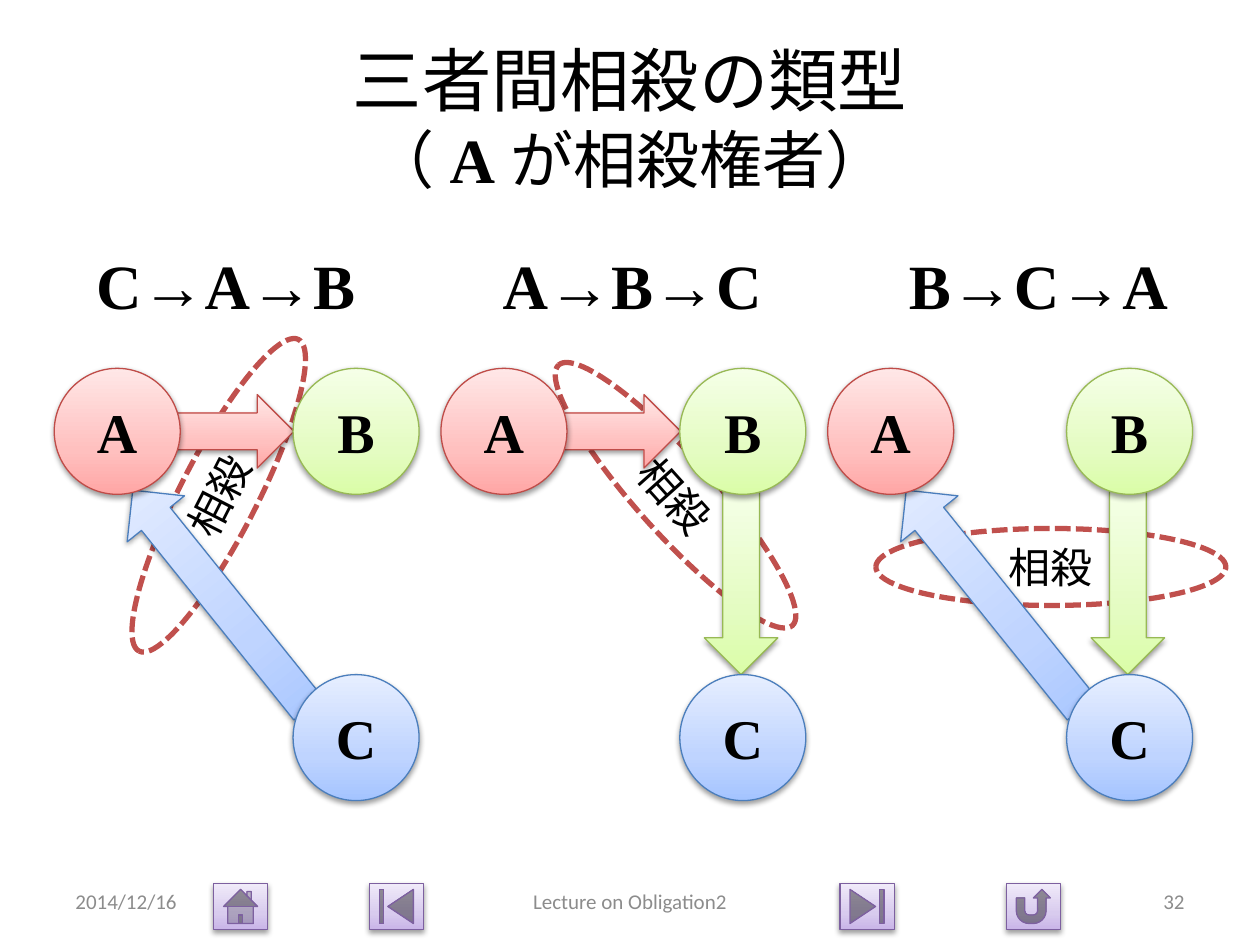
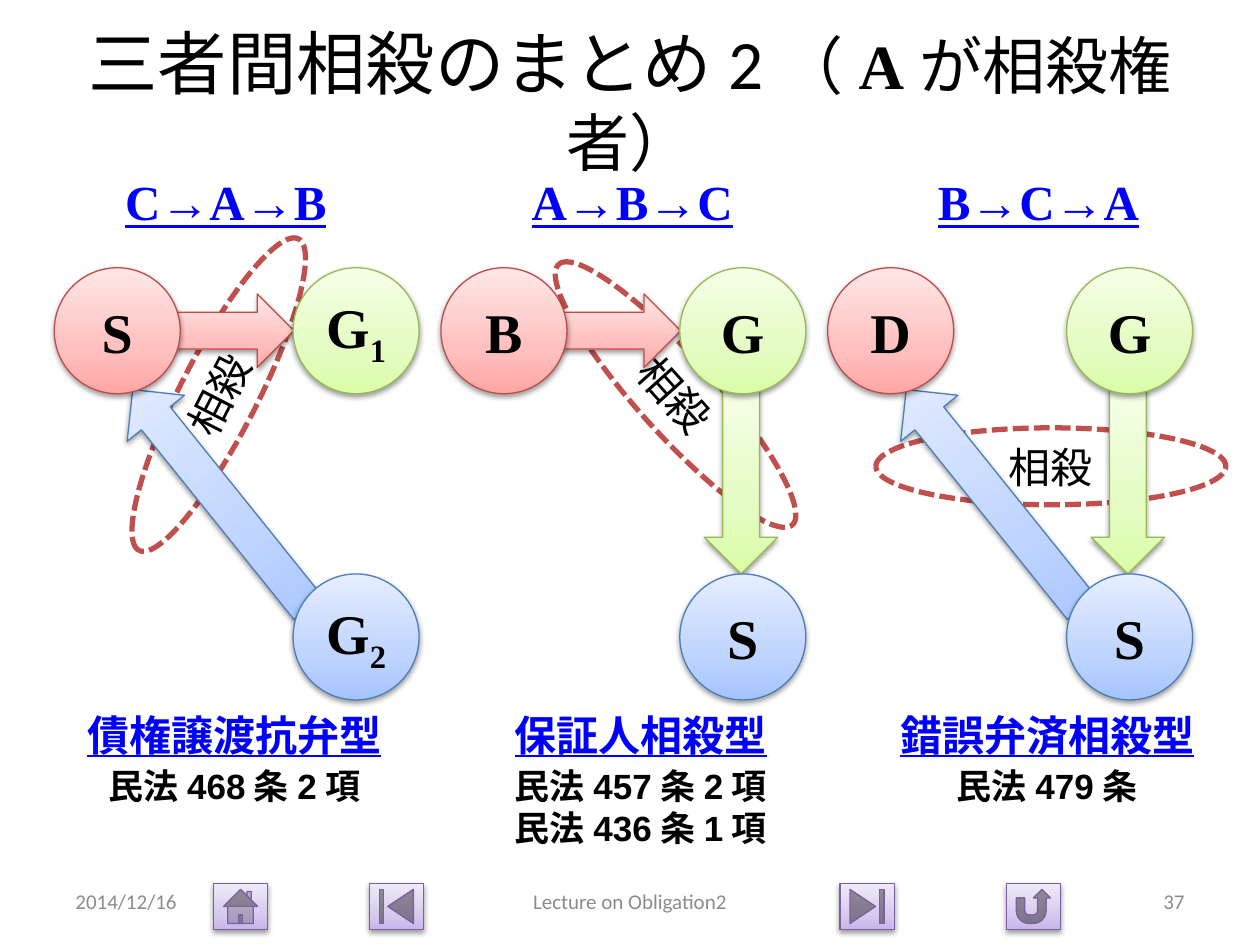
from copy import deepcopy
from dataclasses import dataclass
from typing import NamedTuple

from pptx import Presentation
from pptx.dml.color import RGBColor
from pptx.enum.dml import MSO_LINE
from pptx.enum.lang import MSO_LANGUAGE_ID as Lang
from pptx.enum.shapes import MSO_SHAPE as Shape
from pptx.enum.text import MSO_ANCHOR as Anchor, PP_ALIGN as Align
from pptx.oxml.ns import qn
from pptx.util import Pt
from lxml.etree import SubElement


class Box(NamedTuple):
    x: float
    y: float
    w: float
    h: float
    rot: float = 0

    def shifted(self, dx: float, dy: float = 0) -> "Box":
        return self._replace(x=self.x + dx, y=self.y + dy)


class Style(NamedTuple):
    font: str
    size: float
    color: str = "000000"
    bold: bool = False
    underline: bool = False


class Theme(NamedTuple):
    dark: str
    mid: str
    light: str
    line: str


class Part(NamedTuple):
    kind: Shape
    box: Box
    theme: Theme


@dataclass
class Case:
    flow: str
    names: tuple[str, str, str]
    model: str = ""
    articles: str = ""


@dataclass
class Page:
    number: str
    title: str
    title_height: float
    top: float
    flow_box: Box
    flow_style: Style
    flow_anchor: Anchor
    cases: list[Case]


RED = Theme("FFA6A5", "FFC0BF", "FFE7E7", "BF4C48")
GREEN = Theme("DAFDA7", "E4FCC2", "F5FFE7", "98B955")
BLUE = Theme("A4C4FF", "BFD4FF", "E6EEFF", "4B7EBC")
PURPLE = Theme("C9B5E8", "D8CBEE", "F0EAF9", "7D60A0")
OFFSET_RED, LINK = "C0504D", "0000FF"

SERIF, SANS, CJK = "Times New Roman", "Calibri", "Noto Sans CJK JP"
TITLE = Style(SANS, 39.6)
SUBTITLE = Style(SANS, 36)
HOLDER = Style(SERIF, 36, bold=True)
NAME = Style(SERIF, 32, bold=True)
OFFSET = Style(CJK, 24)
FOOTER = Style(SANS, 12, "8C8C8C")
MODEL = Style("Arial", 24, LINK, True, True)
ARTICLES = Style("Arial", 20, bold=True)

COLUMN_LEFT, COLUMN_PITCH, LABEL_PITCH = 31, 221, 232.2

A_TO_B = Part(Shape.RIGHT_ARROW, Box(60, 15, 77, 42), RED)
C_TO_A = Part(Shape.UP_ARROW, Box(74, 52, 42, 160, 321.2), BLUE)
B_TO_C = Part(Shape.DOWN_ARROW, Box(150.5, 70, 42, 105), GREEN)
CASE_ARROWS = [(A_TO_B, C_TO_A), (B_TO_C, A_TO_B), (C_TO_A, B_TO_C)]
OFFSET_RINGS = [Box(-6, 50.5, 200, 44, 297.1), Box(34, 50.5, 200, 44, 48.1),
                Box(27.5, 91.5, 200, 44)]
CIRCLES = [Part(Shape.OVAL, Box(x, y, 72, 72), theme)
           for x, y, theme in [(0, 0, RED), (136.5, 0, GREEN), (136.5, 175, BLUE)]]
BUTTONS = [Part(kind, Box(x, 505, 31, 26), PURPLE) for kind, x in [
    (Shape.ACTION_BUTTON_HOME, 122), (Shape.ACTION_BUTTON_BEGINNING, 211),
    (Shape.ACTION_BUTTON_END, 480), (Shape.ACTION_BUTTON_RETURN, 575)]]

PAGES = [
    Page("32", "三者間相殺の類型\v", 90, 210.5, Box(46, 137.5, 166, 51),
         Style(SERIF, 36, bold=True), Anchor.TOP, [
             Case("C→A→B", ("A", "B", "C")),
             Case("A→B→C", ("A", "B", "C")),
             Case("B→C→A", ("A", "B", "C"))]),
    Page("37", "三者間相殺のまとめ2", 70.5, 153, Box(38, 94.5, 182, 41),
         Style(SERIF, 28, LINK, True, True), Anchor.MIDDLE, [
             Case("C→A→B", ("S", "G1", "G2"), "債権譲渡抗弁型", "民法468条2項"),
             Case("A→B→C", ("B", "G", "S"), "保証人相殺型",
                  "民法457条2項\n民法436条1項"),
             Case("B→C→A", ("D", "G", "S"), "錯誤弁済相殺型", "民法479条")]),
]


def rgb(color: str) -> RGBColor:
    return RGBColor.from_string(color)


def format_run(r, style: Style) -> None:
    font = r.font
    font.name, font.size = style.font, Pt(style.size)
    font.bold, font.underline = style.bold, style.underline
    font.color.rgb = rgb(style.color)
    font.language_id = Lang.JAPANESE
    latin = r._r.rPr.find(qn("a:latin"))
    ea = deepcopy(latin)
    ea.tag = qn("a:ea")
    latin.addnext(ea)


def write(tf, text: str, style: Style, align: Align = Align.CENTER,
          anchor: Anchor = Anchor.MIDDLE) -> None:
    tf.text = text
    tf.word_wrap = True
    tf.vertical_anchor = anchor
    for p in tf.paragraphs:
        p.alignment = align
        for r in p.runs:
            format_run(r, style)


def append(p, text: str, style: Style):
    r = p.add_run()
    r.text = text
    format_run(r, style)
    return r


def add_text(s, box: Box, text: str, style: Style, align: Align = Align.CENTER,
             anchor: Anchor = Anchor.MIDDLE):
    tf = s.shapes.add_textbox(*map(Pt, box[:4])).text_frame
    write(tf, text, style, align, anchor)
    return tf


def add_preset(s, kind: Shape, box: Box):
    sp = s.shapes.add_shape(kind, *map(Pt, box[:4]))
    sp.rotation = box.rot
    sp.shadow.inherit = False
    return sp


def add_shadow(sp) -> None:
    effects = sp._element.spPr.find(qn("a:effectLst"))
    shadow = SubElement(effects, qn("a:outerShdw"), blurRad="40000", dist="20000",
                        dir="5400000", rotWithShape="0")
    color = SubElement(shadow, qn("a:srgbClr"), val="000000")
    SubElement(color, qn("a:alpha"), val="38000")


def add_part(s, part: Part, dx: float = 0, dy: float = 0):
    sp = add_preset(s, part.kind, part.box.shifted(dx, dy))
    theme = part.theme
    sp.fill.gradient()
    sp.fill.gradient_angle = 90
    stops = sp._element.spPr.find(".//" + qn("a:gsLst"))
    stops.insert(1, deepcopy(stops[0]))
    for stop, position, color in zip(sp.fill.gradient_stops, (0, 0.35, 1), theme[:3]):
        stop.position = position
        stop.color.rgb = rgb(color)
    sp.line.color.rgb = rgb(theme.line)
    sp.line.width = Pt(0.75)
    add_shadow(sp)
    return sp


def add_offset_ring(s, box: Box) -> None:
    sp = add_preset(s, Shape.OVAL, box)
    sp.fill.background()
    sp.line.color.rgb = rgb(OFFSET_RED)
    sp.line.width = Pt(3)
    sp.line.dash_style = MSO_LINE.SQUARE_DOT
    write(sp.text_frame, "相殺", OFFSET)


def add_circle(s, part: Part, name: str, dx: float, dy: float) -> None:
    tf = add_part(s, part, dx, dy).text_frame
    tf.margin_left = tf.margin_right = 0
    write(tf, name[0], NAME)
    if name[1:]:
        r = append(tf.paragraphs[0], name[1:], NAME)
        r._r.rPr.set("baseline", "-25000")


def add_case(s, page: Page, column: int) -> None:
    case = page.cases[column]
    left = COLUMN_LEFT + column * COLUMN_PITCH
    label_shift = column * LABEL_PITCH
    add_offset_ring(s, OFFSET_RINGS[column].shifted(left, page.top))
    for arrow in CASE_ARROWS[column]:
        add_part(s, arrow, left, page.top)
    for circle, name in zip(CIRCLES, case.names):
        add_circle(s, circle, name, left, page.top)
    add_text(s, page.flow_box.shifted(label_shift), case.flow, page.flow_style,
             anchor=page.flow_anchor)
    if case.model:
        add_text(s, Box(34, 402, 200, 36).shifted(label_shift), case.model, MODEL,
                 anchor=Anchor.TOP)
        height = 32 + 23.5 * case.articles.count("\n")
        add_text(s, Box(34, 433.5, 200, height).shifted(label_shift), case.articles,
                 ARTICLES, anchor=Anchor.TOP)


def add_title(s, page: Page) -> None:
    tf = add_text(s, Box(36, 21.6, 648, page.title_height), page.title, TITLE)
    p = tf.paragraphs[0]
    for text, style in [("（", SUBTITLE), ("A", HOLDER), ("が相殺権者）", SUBTITLE)]:
        append(p, text, style)


def add_footer(s, number: str) -> None:
    for button in BUTTONS:
        add_part(s, button)
    for x, w, text, align in [(36, 168, "2014/12/16", Align.LEFT),
                              (246, 228, "Lecture on Obligation2", Align.CENTER),
                              (516, 168, number, Align.RIGHT)]:
        add_text(s, Box(x, 500.5, w, 28.75), text, FOOTER, align)


def main() -> None:
    prs = Presentation()
    prs.slide_width, prs.slide_height = Pt(720), Pt(540)
    for page in PAGES:
        s = prs.slides.add_slide(prs.slide_layouts[6])
        add_footer(s, page.number)
        add_title(s, page)
        for column in range(len(page.cases)):
            add_case(s, page, column)
    prs.save("out.pptx")


if __name__ == "__main__":
    main()
